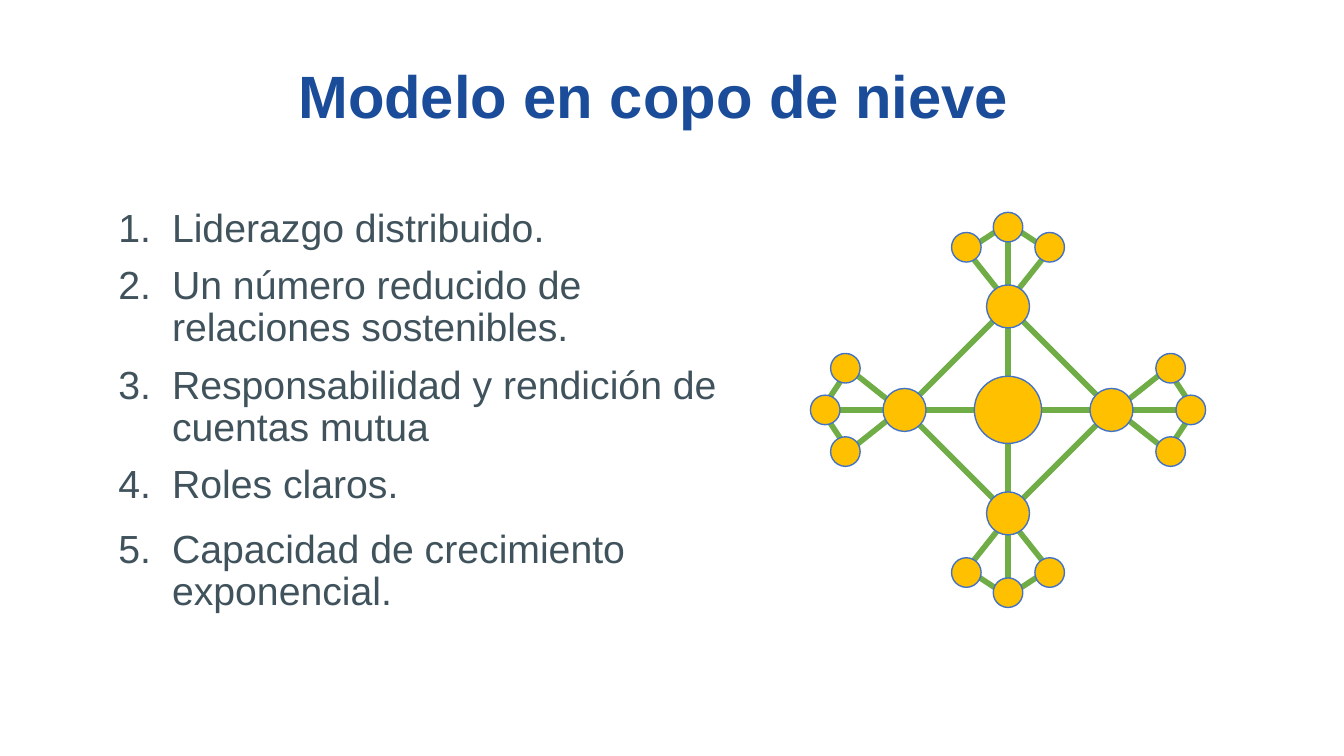
"""Build the snowflake leadership model slide."""
from math import copysign, sqrt

from lxml.etree import SubElement
from pptx import Presentation
from pptx.dml.color import RGBColor
from pptx.enum.shapes import MSO_CONNECTOR, MSO_SHAPE
from pptx.enum.text import MSO_ANCHOR, MSO_AUTO_SIZE, PP_ALIGN
from pptx.oxml.ns import qn
from pptx.util import Inches, Pt

COLORS = {
    "title": "1A4C99",
    "text": "40535C",
    "link": "70AD47",
    "node": "FFC000",
    "outline": "4472C4",
}
LIST_ITEMS = [
    "Liderazgo distribuido.",
    "Un número reducido de relaciones sostenibles.",
    "Responsabilidad y rendición de cuentas mutua",
    "Roles claros.",
    "Capacidad de crecimiento exponencial.",
]
SPACES_BEFORE = [0, 8, 8, 8, 12]
CENTER = (7.5, 3.05, 0.25)
DIRECTIONS = [(1, 0), (0, 1), (-1, 0), (0, -1)]
HUB_DISTANCE, HUB_RADIUS = 0.77, 0.16
LEAF_OFFSETS = [(1.21, -0.31), (1.36, 0), (1.21, 0.31)]
LEAF_RADIUS = 0.11


def write(paragraph, text, size, color, bold=False, align=PP_ALIGN.LEFT,
          line_spacing=1.0, space_before=0):
    paragraph.alignment = align
    paragraph.line_spacing = line_spacing
    paragraph.space_before = Pt(space_before)
    run = paragraph.add_run()
    run.text = text
    run.font.name = "Arial"
    run.font.size = Pt(size)
    run.font.bold = bold
    run.font.color.rgb = RGBColor.from_string(COLORS[color])


def place(direction, along, across, radius):
    x, y = direction
    return (CENTER[0] + along * x - across * y,
            CENTER[1] + along * y + across * x, radius)


class SnowflakeSlide:
    def __init__(self, presentation):
        self.slide = presentation.slides.add_slide(presentation.slide_layouts[1])
        self.diagram = None

    def frame(self, placeholder, box, margins, anchor):
        placeholder.left, placeholder.top, placeholder.width, placeholder.height = map(Inches, box)
        frame = placeholder.text_frame
        frame.word_wrap = True
        frame.auto_size = MSO_AUTO_SIZE.NONE
        frame.vertical_anchor = anchor
        frame.margin_left = frame.margin_right = Inches(margins[0])
        frame.margin_top = frame.margin_bottom = Inches(margins[1])
        return frame

    def title(self, text, box):
        frame = self.frame(self.slide.shapes.title, box, (0.1, 0.05), MSO_ANCHOR.MIDDLE)
        write(frame.paragraphs[0], text, size=32, color="title", bold=True,
              align=PP_ALIGN.CENTER)

    def numbered_list(self, items, box):
        frame = self.frame(self.slide.placeholders[1], box, (0.07, 0.04), MSO_ANCHOR.TOP)
        for index, (text, space) in enumerate(zip(items, SPACES_BEFORE)):
            paragraph = frame.add_paragraph() if index else frame.paragraphs[0]
            properties = paragraph._p.get_or_add_pPr()
            properties.set("marL", str(Inches(0.5)))
            properties.set("indent", str(Inches(-0.4)))
            bullet_color = SubElement(properties, qn("a:buClr"))
            SubElement(bullet_color, qn("a:srgbClr"), val=COLORS["text"])
            SubElement(properties, qn("a:buFont"), typeface="Arial")
            SubElement(properties, qn("a:buAutoNum"), type="arabicPeriod")
            write(paragraph, text, size=21, color="text", line_spacing=0.9,
                  space_before=space)

    def link(self, start, end):
        deltas = [round(b - a, 2) for a, b in zip(start[:2], end[:2])]
        signs = [copysign(1, delta) if delta else 0 for delta in deltas]
        length = sqrt(sum(abs(sign) for sign in signs))
        begin = [start[i] - start[2] * signs[i] / length for i in (0, 1)]
        finish = [end[i] + end[2] * signs[i] / length for i in (0, 1)]
        connector = self.diagram.shapes.add_connector(
            MSO_CONNECTOR.STRAIGHT, *map(Inches, begin + finish))
        connector.line.color.rgb = RGBColor.from_string(COLORS["link"])
        connector.line.width = Pt(3)
        SubElement(connector._element.spPr, qn("a:effectLst"))

    def node(self, x, y, radius):
        shape = self.diagram.shapes.add_shape(
            MSO_SHAPE.OVAL, Inches(x - radius), Inches(y - radius),
            Inches(2 * radius), Inches(2 * radius))
        shape.shadow.inherit = False
        shape.fill.solid()
        shape.fill.fore_color.rgb = RGBColor.from_string(COLORS["node"])
        shape.line.color.rgb = RGBColor.from_string(COLORS["outline"])
        shape.line.width = Pt(0.75)

    def snowflake(self):
        self.diagram = self.slide.shapes.add_group_shape()
        hubs = [place(direction, HUB_DISTANCE, 0, HUB_RADIUS) for direction in DIRECTIONS]
        nodes = [CENTER, *hubs]
        for index, (direction, hub) in enumerate(zip(DIRECTIONS, hubs)):
            leaves = [place(direction, *offset, LEAF_RADIUS) for offset in LEAF_OFFSETS]
            self.link(hub, CENTER)
            self.link(hubs[index - 1], hub)
            for leaf in leaves:
                self.link(hub, leaf)
            for first, second in zip(leaves, leaves[1:]):
                self.link(first, second)
            nodes += leaves
        for node in nodes:
            self.node(*node)


def main():
    presentation = Presentation()
    presentation.slide_width = Inches(10)
    presentation.slide_height = Inches(10) * 9 // 16
    slide = SnowflakeSlide(presentation)
    slide.numbered_list(LIST_ITEMS, (0.71, 1.51, 5.07, 3.74))
    slide.snowflake()
    slide.title("Modelo en copo de nieve", (1.64, 0.38, 6.45, 0.65))
    presentation.save("out.pptx")


if __name__ == "__main__":
    main()
